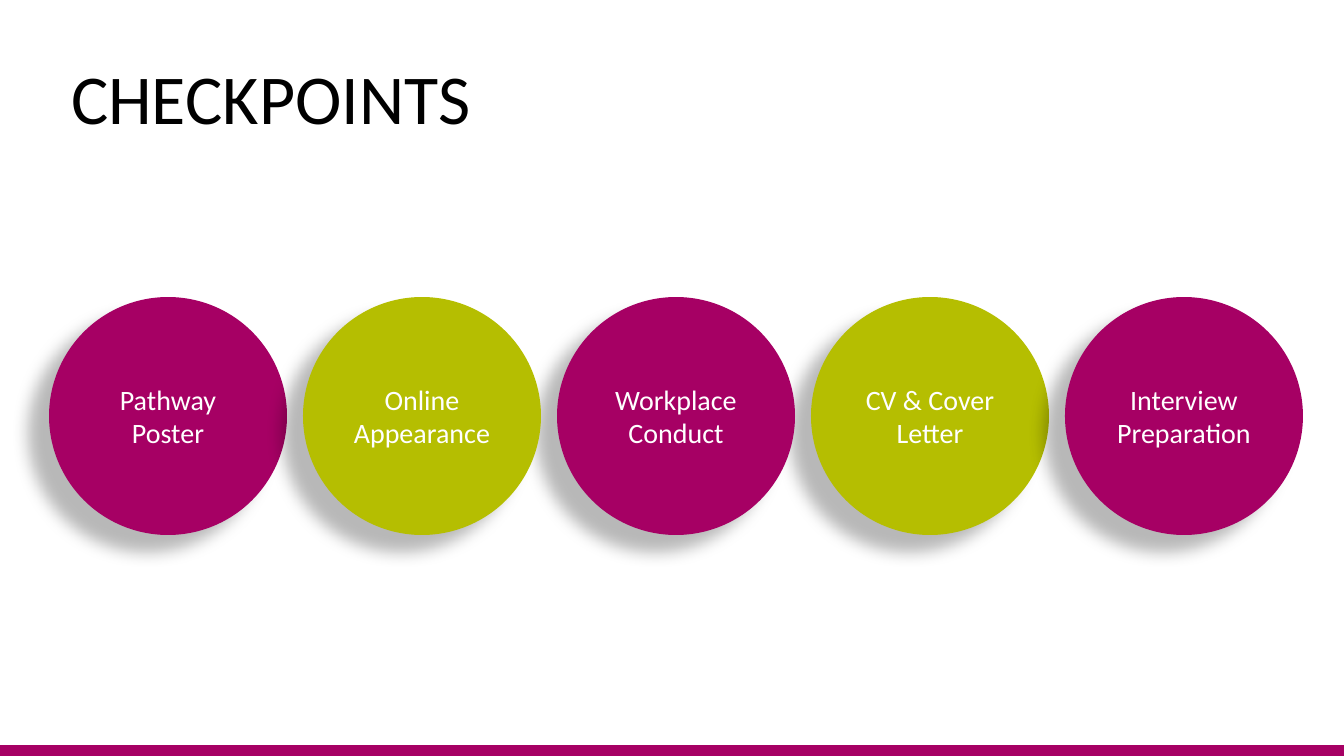
from dataclasses import dataclass

from lxml import etree
from pptx import Presentation
from pptx.dml.color import RGBColor
from pptx.enum.shapes import MSO_SHAPE
from pptx.enum.text import MSO_ANCHOR, PP_ALIGN
from pptx.oxml.ns import qn
from pptx.util import Emu, Pt

OVAL, RECTANGLE = MSO_SHAPE.OVAL, MSO_SHAPE.RECTANGLE
LEFT, CENTER = PP_ALIGN.LEFT, PP_ALIGN.CENTER
MIDDLE, TOP = MSO_ANCHOR.MIDDLE, MSO_ANCHOR.TOP
TITLE_ONLY = 5
PAGE_WIDTH, PAGE_HEIGHT = 1344, 756
EMU_PER_PX = 12192000 / PAGE_WIDTH

CIRCLE_LEFT, CIRCLE_TOP = 49, 297
CIRCLE_SIZE, CIRCLE_PITCH = 238, 254
BAND_HEIGHT = 11

CHECKPOINTS = [
    "Pathway Poster",
    "Online Appearance",
    "Workplace Conduct",
    "CV & Cover Letter",
    "Interview\nPreparation",
]
# Back to front: decides which circles receive a neighbour's shadow.
STACKING = [3, 0, 2, 1, 4]


@dataclass(frozen=True)
class Theme:
    font: str = "Calibri"
    title_size: int = 50
    label_size: int = 20
    magenta: str = "A60064"
    lime: str = "B5BE01"
    black: str = "000000"
    white: str = "FFFFFF"


THEME = Theme()


def px(length):
    return Emu(round(length * EMU_PER_PX))


def place(*lengths):
    return [px(length) for length in lengths]


def format_text(frame, size, color, align, anchor):
    frame.word_wrap = True
    frame.vertical_anchor = anchor
    for para in frame.paragraphs:
        para.alignment = align
        for span in para.runs:
            span.font.name = THEME.font
            span.font.size = Pt(size)
            span.font.color.rgb = RGBColor.from_string(color)


def add_title(page, text):
    title = page.shapes.title
    title.left, title.top, title.width, title.height = place(61, 49, 450, 95)
    frame = title.text_frame
    frame.text = text
    format_text(frame, THEME.title_size, THEME.black, LEFT, TOP)


def add_filled_shape(page, kind, box, color):
    shape = page.shapes.add_shape(kind, *place(*box))
    shape.shadow.inherit = False
    shape.fill.solid()
    shape.fill.fore_color.rgb = RGBColor.from_string(color)
    shape.line.fill.background()
    return shape


def add_soft_shadow(shape):
    """Cast a blurred shadow to the lower left."""
    effects = shape._element.spPr.find(qn("a:effectLst"))
    shadow = etree.SubElement(
        effects, qn("a:outerShdw"),
        blurRad=str(Pt(11.8)), dist=str(Pt(19.7)), dir=str(141 * 60000),
        algn="tl", rotWithShape="0",
    )
    color = etree.SubElement(shadow, qn("a:srgbClr"), val=THEME.black)
    etree.SubElement(color, qn("a:alpha"), val="28000")


def add_checkpoint(page, index):
    left = CIRCLE_LEFT + index * CIRCLE_PITCH
    color = THEME.lime if index % 2 else THEME.magenta
    box = (left, CIRCLE_TOP, CIRCLE_SIZE, CIRCLE_SIZE)
    circle = add_filled_shape(page, OVAL, box, color)
    add_soft_shadow(circle)
    frame = circle.text_frame
    frame.text = CHECKPOINTS[index]
    format_text(frame, THEME.label_size, THEME.white, CENTER, MIDDLE)


def main():
    deck = Presentation()
    deck.slide_width, deck.slide_height = place(PAGE_WIDTH, PAGE_HEIGHT)
    page = deck.slides.add_slide(deck.slide_layouts[TITLE_ONLY])
    add_title(page, "CHECKPOINTS")
    for index in STACKING:
        add_checkpoint(page, index)
    band = (0, PAGE_HEIGHT - BAND_HEIGHT, PAGE_WIDTH, BAND_HEIGHT)
    add_filled_shape(page, RECTANGLE, band, THEME.magenta)
    deck.save("out.pptx")


if __name__ == "__main__":
    main()
